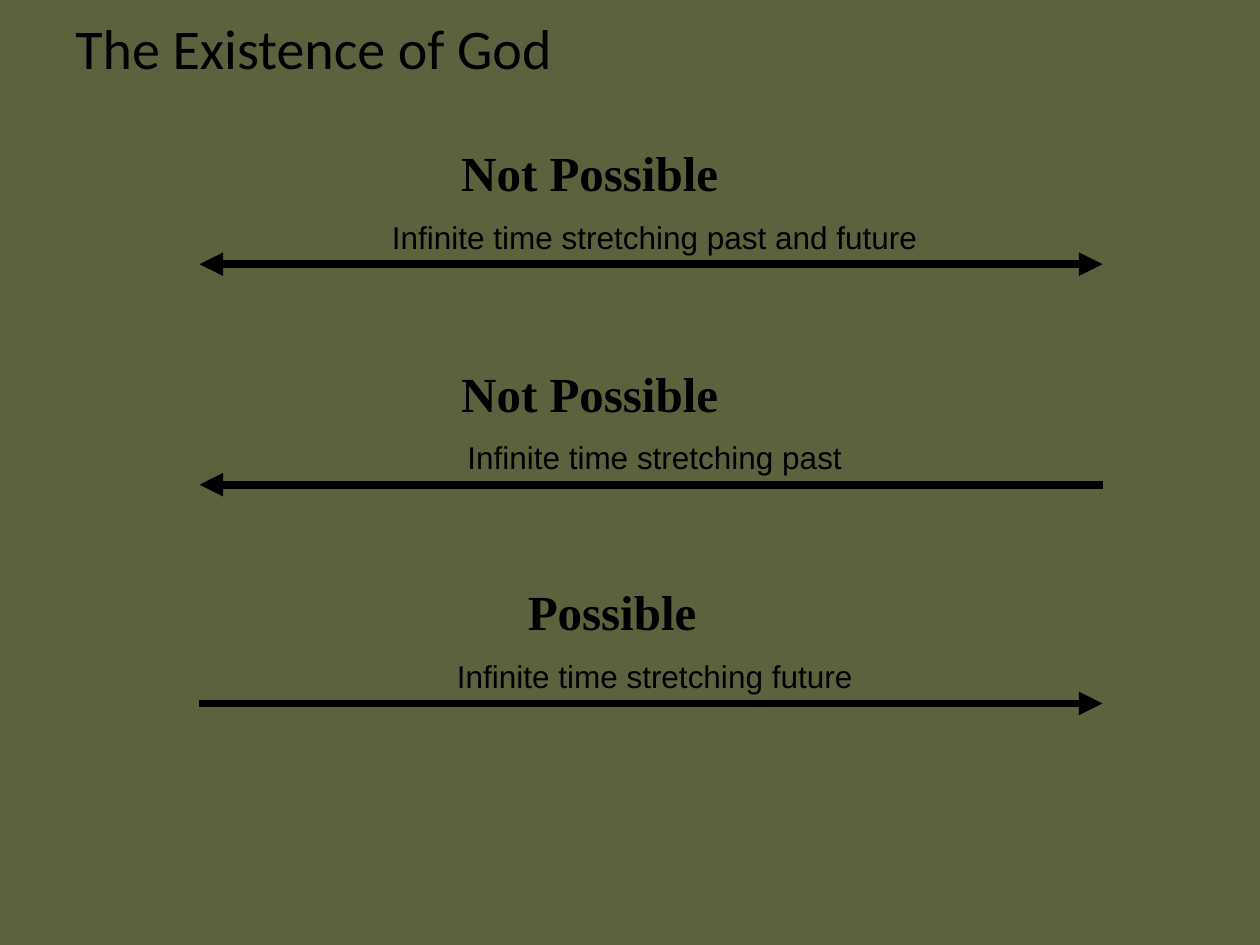
from lxml.etree import SubElement
from pptx import Presentation
from pptx.dml.color import RGBColor
from pptx.enum.shapes import MSO_CONNECTOR
from pptx.enum.text import MSO_ANCHOR, MSO_AUTO_SIZE, PP_ALIGN
from pptx.oxml.ns import qn
from pptx.util import Pt

TITLE = "The Existence of God"
TIMELINES = [
    {"verdict": "Not Possible", "verdict_left": 256.5, "verdict_width": 223.2,
     "caption": "Infinite time stretching past and future", "caption_width": 318,
     "y": 151, "arrowheads": ("headEnd", "tailEnd")},
    {"verdict": "Not Possible", "verdict_left": 256.5, "verdict_width": 223.2,
     "caption": "Infinite time stretching past", "caption_width": 232,
     "y": 277, "arrowheads": ("headEnd",)},
    {"verdict": "Possible", "verdict_left": 294.5, "verdict_width": 147.6,
     "caption": "Infinite time stretching future", "caption_width": 244,
     "y": 402, "arrowheads": ("tailEnd",)},
]
THEME = {
    "background": RGBColor(0x5C, 0x62, 0x3E),
    "ink": RGBColor(0, 0, 0),
    "line_width": 4.5,
    "title": ("Calibri", 32, False),
    "verdict": ("Times New Roman", 28, True),
    "caption": ("Arial", 18, False),
}
LINE_LEFT, LINE_RIGHT = 114, 630
CAPTION_CENTER = 374.1
CAPTION_RISE, CAPTION_HEIGHT = 30, 28.8
VERDICT_RISE, VERDICT_HEIGHT = 73, 41


def add_text(slide, text, role, left, top, width, height):
    box = slide.shapes.add_textbox(Pt(left), Pt(top), Pt(width), Pt(height))
    box.text_frame.word_wrap = True
    paragraph = box.text_frame.paragraphs[0]
    paragraph.text = text
    font = paragraph.font
    font.name, size, font.bold = THEME[role]
    font.size = Pt(size)
    font.color.rgb = THEME["ink"]
    return box.text_frame


def add_time_arrow(slide, y, arrowheads):
    arrow = slide.shapes.add_connector(
        MSO_CONNECTOR.STRAIGHT, Pt(LINE_LEFT), Pt(y), Pt(LINE_RIGHT), Pt(y))
    arrow.line.color.rgb = THEME["ink"]
    arrow.line.width = Pt(THEME["line_width"])
    properties = arrow.line._get_or_add_ln()
    for end in arrowheads:
        SubElement(properties, qn(f"a:{end}"), type="triangle")
    SubElement(arrow._element.spPr, qn("a:effectLst"))


def add_timeline(slide, timeline):
    y = timeline["y"]
    add_time_arrow(slide, y, timeline["arrowheads"])
    width = timeline["caption_width"]
    caption = add_text(slide, timeline["caption"], "caption",
                       CAPTION_CENTER - width / 2, y - CAPTION_RISE, width, CAPTION_HEIGHT)
    caption.word_wrap = False
    caption.paragraphs[0].alignment = PP_ALIGN.CENTER
    verdict = add_text(slide, timeline["verdict"], "verdict", timeline["verdict_left"],
                       y - VERDICT_RISE, timeline["verdict_width"], VERDICT_HEIGHT)
    for label in (caption, verdict):
        label.auto_size = MSO_AUTO_SIZE.SHAPE_TO_FIT_TEXT


def main():
    presentation = Presentation()
    presentation.slide_width, presentation.slide_height = Pt(720), Pt(540)
    slide = presentation.slides.add_slide(presentation.slide_layouts[6])
    slide.background.fill.solid()
    slide.background.fill.fore_color.rgb = THEME["background"]
    title = add_text(slide, TITLE, "title", 36, 0, 480, 54)
    title.vertical_anchor = MSO_ANCHOR.MIDDLE
    for timeline in TIMELINES:
        add_timeline(slide, timeline)
    presentation.save("out.pptx")


if __name__ == "__main__":
    main()
